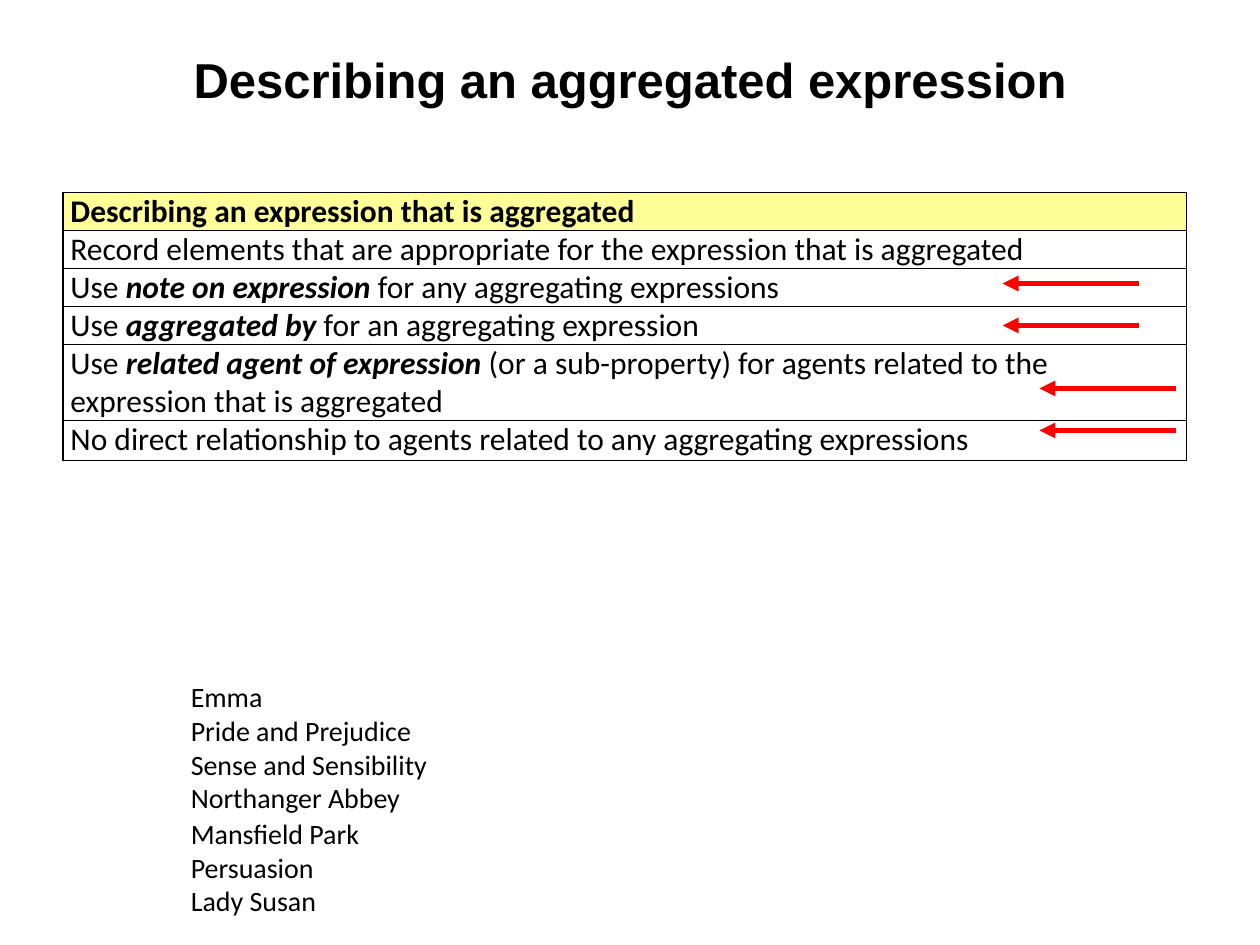
from lxml.etree import SubElement
from pptx import Presentation
from pptx.dml.color import RGBColor
from pptx.enum.shapes import MSO_CONNECTOR as Connector
from pptx.enum.text import MSO_ANCHOR as Anchor, MSO_AUTO_SIZE as AutoSize, PP_ALIGN as Align
from pptx.oxml.ns import qn
from pptx.util import Pt

BLACK = RGBColor(0x00, 0x00, 0x00)
RED = RGBColor(0xFF, 0x00, 0x00)
YELLOW = RGBColor(0xFF, 0xFF, 0x99)

# Each row is a list of (text, emphasised) runs
RULES = [
    [("Describing an expression that is aggregated", False)],
    [("Record elements that are appropriate for the expression that is aggregated", False)],
    [("Use ", False), ("note on expression ", True), ("for any aggregating expressions", False)],
    [("Use ", False), ("aggregated by", True), (" for an aggregating expression", False)],
    [("Use ", False), ("related agent of expression", True),
     (" (or a sub-property) for agents related to the expression that is aggregated", False)],
    [("No direct relationship to agents related to any aggregating expressions", False)],
]
ROW_HEIGHTS = [21.7, 21.7, 21.7, 21.7, 43.4, 23]

NOVELS_TOP = ["Emma", "Pride and Prejudice", "Sense and Sensibility", "Northanger Abbey"]
NOVELS_BOTTOM = ["Mansfield Park", "Persuasion", "Lady Susan"]

ARROW_LENGTH = 78
ARROWS = [(594, 222), (594, 246), (573, 162), (573, 186)]  # tip of each arrow


def format_run(run, size, name="Calibri", bold=False, italic=False):
    font = run.font
    font.name, font.size = name, Pt(size)
    font.bold, font.italic = bold, italic
    font.color.rgb = BLACK


def set_title(slide, text):
    title = slide.shapes.title
    title.left, title.top, title.width, title.height = Pt(0), Pt(0), Pt(720), Pt(90)
    frame = title.text_frame
    frame.text = text
    frame.vertical_anchor = Anchor.MIDDLE
    paragraph = frame.paragraphs[0]
    paragraph.alignment = Align.CENTER
    format_run(paragraph.runs[0], 28, "Arial", bold=True)


def add_list(slide, lines, left, top, width, height):
    box = slide.shapes.add_textbox(Pt(left), Pt(top), Pt(width), Pt(height))
    frame = box.text_frame
    frame.word_wrap = True
    frame.auto_size = AutoSize.SHAPE_TO_FIT_TEXT
    frame.text = "\n".join(lines)
    for paragraph in frame.paragraphs:
        format_run(paragraph.runs[0], 16)


def add_arrow(slide, left, top):
    arrow = slide.shapes.add_connector(
        Connector.STRAIGHT, Pt(left), Pt(top), Pt(left + ARROW_LENGTH), Pt(top))
    arrow.line.color.rgb = RED
    arrow.line.width = Pt(3)
    SubElement(arrow.line._get_or_add_ln(), qn("a:headEnd"), type="triangle")
    SubElement(arrow._element.spPr, qn("a:effectLst"))


def add_borders(cell):
    properties = cell._tc.get_or_add_tcPr()
    for index, side in enumerate(("lnL", "lnR", "lnT", "lnB")):
        line = SubElement(properties, qn(f"a:{side}"), w=str(Pt(1)))
        properties.insert(index, line)  # borders precede the fill
        fill = SubElement(line, qn("a:solidFill"))
        SubElement(fill, qn("a:srgbClr"), val=str(BLACK))


def add_rules_table(slide):
    table = slide.shapes.add_table(
        len(RULES), 1, Pt(36), Pt(110), Pt(642), Pt(sum(ROW_HEIGHTS))).table
    table.first_row = table.horz_banding = False
    for index, (runs, height) in enumerate(zip(RULES, ROW_HEIGHTS)):
        is_header = index == 0
        table.rows[index].height = Pt(height)
        cell = table.cell(index, 0)
        cell.margin_left = cell.margin_right = Pt(4.3)
        cell.margin_top = cell.margin_bottom = Pt(0)
        if is_header:
            cell.fill.solid()
            cell.fill.fore_color.rgb = YELLOW
        else:
            cell.fill.background()
        add_borders(cell)
        paragraph = cell.text_frame.paragraphs[0]
        for text, emphasised in runs:
            run = paragraph.add_run()
            run.text = text
            format_run(run, 18, bold=is_header or emphasised, italic=emphasised)


def main():
    presentation = Presentation()
    presentation.slide_width, presentation.slide_height = Pt(720), Pt(540)
    slide = presentation.slides.add_slide(presentation.slide_layouts[5])

    set_title(slide, "Describing an aggregated expression")

    # Novels in the aggregate
    add_list(slide, NOVELS_BOTTOM, 102, 463, 140, 65.5)
    add_list(slide, NOVELS_TOP, 102, 385, 155, 85)

    # Arrows marking the rules for aggregating expressions
    for left, top in ARROWS:
        add_arrow(slide, left, top)

    add_rules_table(slide)
    presentation.save("out.pptx")


if __name__ == "__main__":
    main()
